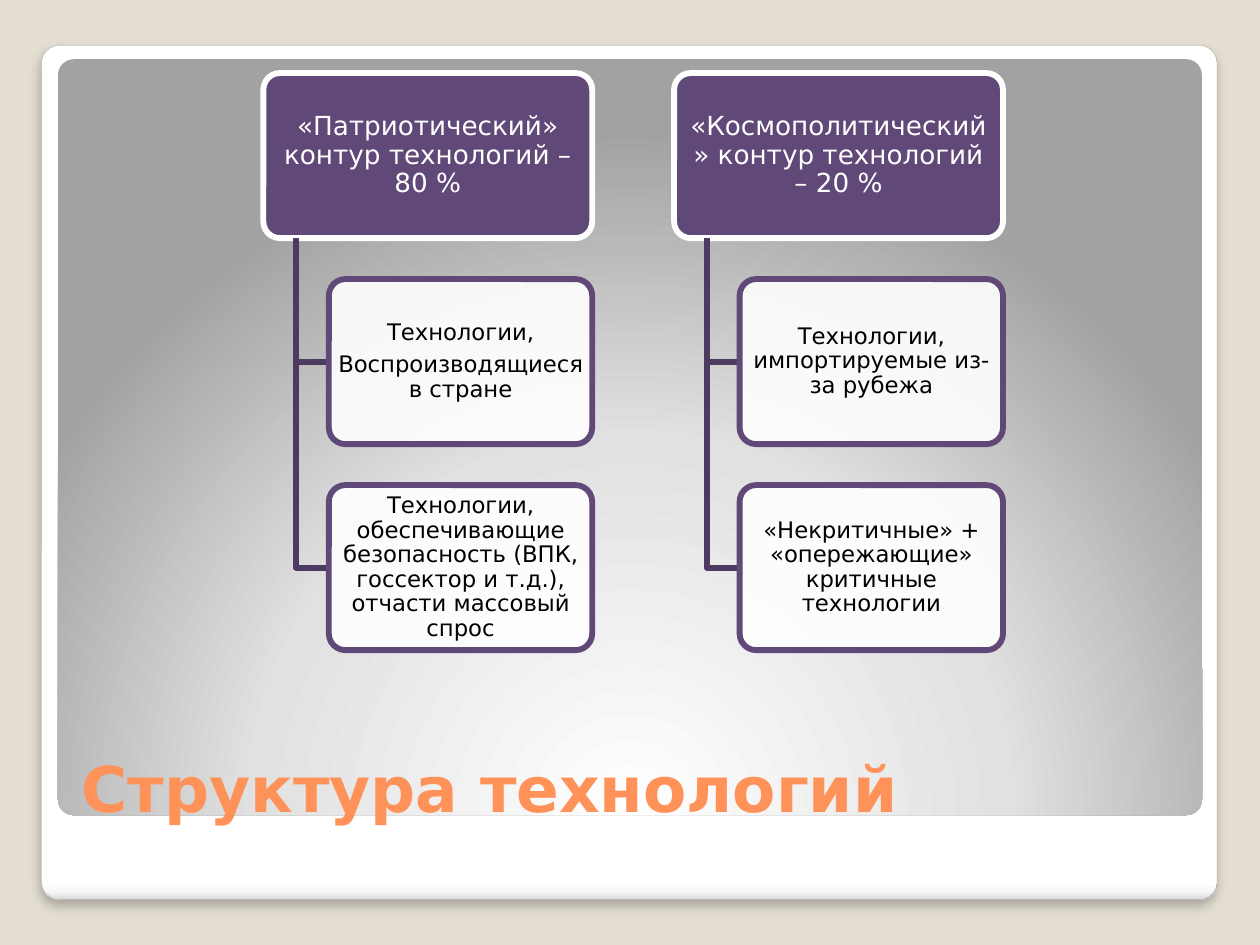
from lxml import etree
from pptx import Presentation
from pptx.dml.color import RGBColor
from pptx.enum import shapes, text
from pptx.oxml import ns
from pptx.util import Inches, Pt

FONT = "DejaVu Sans"
BEIGE = RGBColor(0xE3, 0xDE, 0xD1)
WHITE = RGBColor(0xFF, 0xFF, 0xFF)
BLACK = RGBColor(0x00, 0x00, 0x00)
GRAY = RGBColor(0xA4, 0xA4, 0xA4)
SILVER = RGBColor(0xE1, 0xE1, 0xE1)
STEEL = RGBColor(0xA2, 0xA2, 0xA2)
MIST = RGBColor(0xF7, 0xF7, 0xF7)
ASH = RGBColor(0xDA, 0xDA, 0xDA)
PURPLE = RGBColor(0x60, 0x48, 0x78)
DARK_PURPLE = RGBColor(0x4D, 0x3A, 0x60)
ORANGE = RGBColor(0xFF, 0x92, 0x58)

NODE_H, ROW_STEP, INDENT, HALF_INDENT = 1.31, 1.635, 0.52, 0.26
BRANCHES = [
    ("«Патриотический» контур технологий – 80 %",
     [["Технологии,", "Воспроизводящиеся в стране"],
      ["Технологии, обеспечивающие безопасность (ВПК, госсектор и т.д.), "
       "отчасти массовый спрос"]]),
    ("«Космополитический» контур технологий – 20 %",
     [["Технологии, импортируемые из-за рубежа"],
      ["«Некритичные» + «опережающие» критичные технологии"]]),
]


def add_xml(parent, tag, **attrs):
    """Append a DrawingML child element and return it."""
    child = etree.SubElement(parent, ns.qn("a:" + tag))
    for name, value in attrs.items():
        child.set(name, str(value))
    return child


def add_round_rect(s, box, adjust, fill):
    """Add a rounded rectangle without shadow or outline."""
    sp = s.shapes.add_shape(shapes.MSO_SHAPE.ROUNDED_RECTANGLE,
                            *[Inches(v) for v in box])
    sp.adjustments[0] = adjust
    sp.fill.solid()
    sp.fill.fore_color.rgb = fill
    sp.line.fill.background()
    sp.shadow.inherit = False
    return sp


def set_line(sp, color, width):
    """Give a shape a solid outline."""
    sp.line.color.rgb = color
    sp.line.width = Pt(width)


def set_gradient(sp, stops):
    """Replace the solid fill by gradient stops and return the gradient."""
    solid = sp.element.spPr.find(ns.qn("a:solidFill"))
    grad = etree.Element(ns.qn("a:gradFill"), rotWithShape="1")
    solid.getparent().replace(solid, grad)
    stop_list = add_xml(grad, "gsLst")
    for pos, color in stops:
        add_xml(add_xml(stop_list, "gs", pos=pos * 1000), "srgbClr", val=color)
    return grad


def add_run(p, content, size, color, bold=False):
    """Add one formatted run to a paragraph."""
    r = p.add_run()
    r.text = content
    r.font.name, r.font.size, r.font.bold = FONT, Pt(size), bold
    r.font.color.rgb = color


def add_frame(s, box):
    """Draw the white card with its shadow and the gray panel inside it."""
    x, y, w, h = box
    card = add_round_rect(s, box, 0.021, WHITE)
    set_line(card, GRAY, 0.16)
    grad = set_gradient(card, [(0, WHITE), (98, WHITE), (99, MIST), (100, ASH)])
    add_xml(grad, "lin", ang=5400000, scaled=0)
    effects = card.element.spPr.find(ns.qn("a:effectLst"))
    shadow = add_xml(effects, "outerShdw", blurRad=Pt(6), dist=Pt(4),
                     dir=5400000, algn="t", rotWithShape=0)
    add_xml(add_xml(shadow, "srgbClr", val=BLACK), "alpha", val=25000)

    panel = add_round_rect(s, (x + 0.13, y + 0.11, w - 0.25, 6), 0.021, WHITE)
    grad = set_gradient(panel, [(0, WHITE), (55, SILVER), (100, STEEL)])
    circle = add_xml(grad, "path", path="circle")
    add_xml(circle, "fillToRect", l=50000, t=175000, r=50000, b=-75000)


def add_title(s, box, content):
    """Place the slide title at the bottom of its box."""
    tf = s.shapes.add_textbox(*[Inches(v) for v in box]).text_frame
    tf.word_wrap = True
    tf.vertical_anchor = text.MSO_ANCHOR.BOTTOM
    add_run(tf.paragraphs[0], content, 36, ORANGE, bold=True)


def add_node(s, box, lines, size, fill, outline, color):
    """Draw one outlined node with centred paragraphs."""
    sp = add_round_rect(s, box, 0.1, fill)
    set_line(sp, outline, 3.35)
    tf = sp.text_frame
    tf.word_wrap = True
    tf.vertical_anchor = text.MSO_ANCHOR.MIDDLE
    tf.margin_left = tf.margin_right = Inches(0.03)
    tf.margin_top = tf.margin_bottom = Inches(0.02)
    for i, content in enumerate(lines):
        p = tf.add_paragraph() if i else tf.paragraphs[0]
        p.alignment = text.PP_ALIGN.CENTER
        p.line_spacing = 0.9
        p.space_after = Pt(size * 0.35)
        add_run(p, content, size, color)
    return sp


def add_elbow(s, x, top, bottom, right):
    """Draw the line from a heading down and across to a child node."""
    builder = s.shapes.build_freeform(Inches(x), Inches(top))
    builder.add_line_segments([(Inches(x), Inches(bottom)),
                               (Inches(right), Inches(bottom))], close=False)
    sp = builder.convert_to_shape()
    sp.fill.background()
    set_line(sp, DARK_PURPLE, 3.35)
    sp.shadow.inherit = False


def add_branch(s, box, heading, children):
    """Draw a heading node with its children hanging below it."""
    x, y, w, h = box
    add_node(s, (x, y, w, h), [heading], 15, PURPLE, WHITE, WHITE)
    for row, lines in enumerate(children, 1):
        top = y + row * ROW_STEP
        add_elbow(s, x + HALF_INDENT, y + h, top + h / 2, x + INDENT)
        child = add_node(s, (x + INDENT, top, w - INDENT, h), lines, 13,
                         WHITE, PURPLE, BLACK)
        color = child.element.spPr.find(ns.qn("a:solidFill"))[0]
        add_xml(color, "alpha", val=90000)


def main():
    """Build the slide and save it."""
    prs = Presentation()
    prs.slide_width, prs.slide_height = Inches(10), Inches(7.5)
    s = prs.slides.add_slide(prs.slide_layouts[6])
    s.background.fill.solid()
    s.background.fill.fore_color.rgb = BEIGE
    add_frame(s, (0.33, 0.36, 9.33, 6.78))
    add_title(s, (0.55, 5.45, 8.95, 1.15), "Структура технологий")
    for col, (heading, children) in enumerate(BRANCHES):
        add_branch(s, (2.09 + col * 3.26, 0.58, 2.61, NODE_H), heading, children)
    prs.save("out.pptx")


if __name__ == "__main__":
    main()
